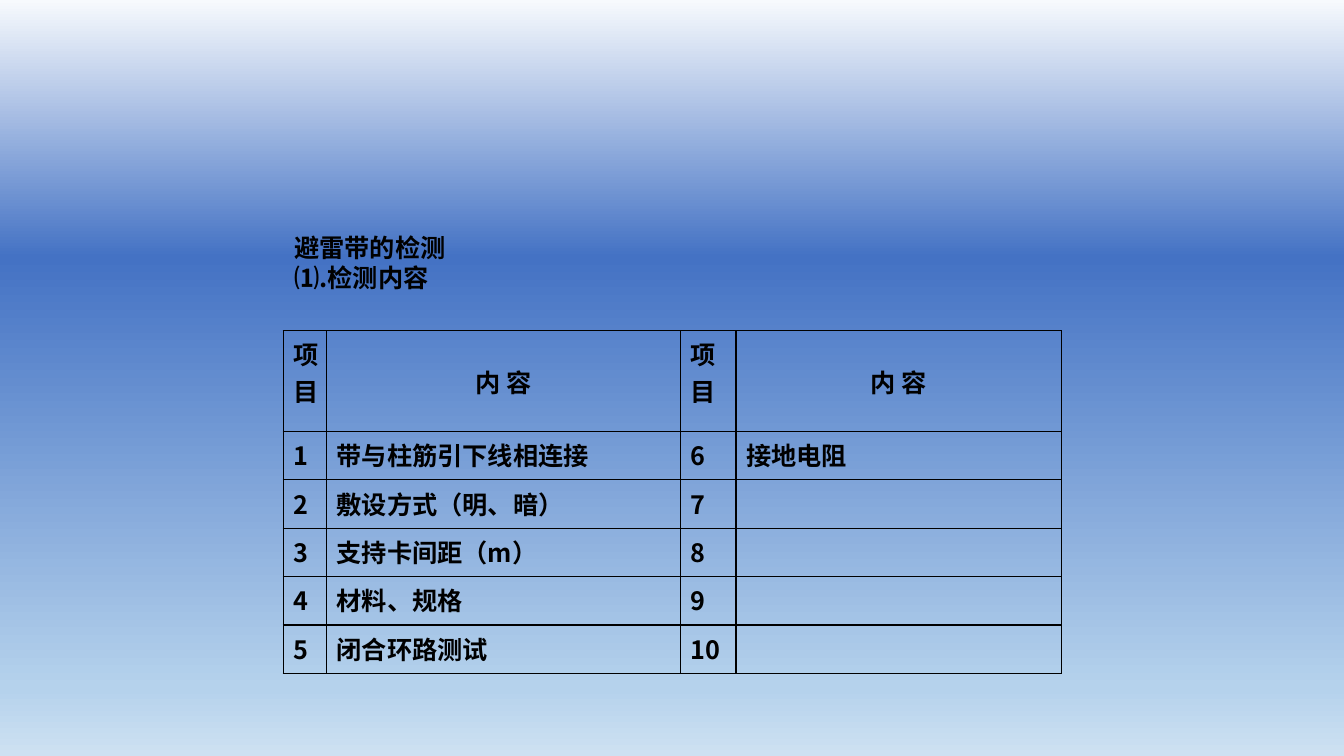
from lxml.etree import SubElement
from pptx import Presentation
from pptx.dml.color import RGBColor
from pptx.enum.text import MSO_ANCHOR, MSO_AUTO_SIZE, PP_ALIGN
from pptx.oxml import parse_xml
from pptx.oxml.ns import nsdecls, qn
from pptx.util import Inches, Pt

BLACK = RGBColor(0x00, 0x00, 0x00)
SKY_STOPS = [
    (0, RGBColor(0xF7, 0xFA, 0xFD)),
    (34, RGBColor(0x44, 0x72, 0xC4)),
    (91, RGBColor(0xB5, 0xD2, 0xEC)),
    (100, RGBColor(0xCE, 0xE1, 0xF2)),
]
FONT = "Noto Sans CJK SC"

TITLE_LINES = ["避雷带的检测", "⑴.检测内容"]
COLUMN_WIDTHS = [0.43, 3.51, 0.55, 3.23]
HEADER_HEIGHT, ROW_HEIGHT = 1, 0.48
HEADER = ["项\n目", "内 容"] * 2
LEFT_ITEMS = ["带与柱筋引下线相连接", "敷设方式（明、暗）", "支持卡间距（m）",
              "材料、规格", "闭合环路测试"]
RIGHT_ITEMS = ["接地电阻", "", "", "", ""]


def style_paragraph(para):
    """Bold black 18 point text, for Latin and East Asian letters."""
    font = para.font
    font.size, font.bold, font.name = Pt(18), True, FONT
    font.color.rgb = BLACK
    properties = para._p.get_or_add_pPr().find(qn("a:defRPr"))
    SubElement(properties, qn("a:ea")).set("typeface", FONT)


def paint_background(page):
    fill = page.background.fill
    fill.gradient()
    fill.gradient_angle = 270
    stops = page.background._cSld.find(".//" + qn("a:gsLst"))
    for old_stop in list(stops):
        stops.remove(old_stop)
    for percent, colour in SKY_STOPS:
        stops.append(parse_xml(
            f'<a:gs {nsdecls("a")} pos="{percent * 1000}">'
            f'<a:srgbClr val="{colour}"/></a:gs>'))


def add_title(page, left, top, width, height):
    box = page.shapes.add_textbox(left, top, width, height)
    frame = box.text_frame
    frame.word_wrap = False
    frame.auto_size = MSO_AUTO_SIZE.SHAPE_TO_FIT_TEXT
    frame.vertical_anchor = MSO_ANCHOR.MIDDLE
    frame.text = "\n".join(TITLE_LINES)
    for para in frame.paragraphs:
        style_paragraph(para)
        para.line_spacing = Pt(21.5)
        para._p.get_or_add_pPr().set("indent", str(Inches(0.41)))


def outline_cell(cell):
    properties = cell._tc.get_or_add_tcPr()
    for side in ("lnL", "lnR", "lnT", "lnB"):
        properties.append(parse_xml(
            f'<a:{side} {nsdecls("a")} w="{Pt(1)}"><a:solidFill>'
            f'<a:srgbClr val="{BLACK}"/></a:solidFill></a:{side}>'))


def add_check_table(page, left, top):
    count = len(LEFT_ITEMS)
    rows = [HEADER] + [
        [str(number), left_item, str(number + count), right_item]
        for number, (left_item, right_item)
        in enumerate(zip(LEFT_ITEMS, RIGHT_ITEMS), start=1)]
    heights = [HEADER_HEIGHT] + [ROW_HEIGHT] * count
    table = page.shapes.add_table(
        len(rows), len(COLUMN_WIDTHS), left, top,
        Inches(sum(COLUMN_WIDTHS)), Inches(sum(heights))).table
    table.first_row = table.horz_banding = False
    for column, width in zip(table.columns, COLUMN_WIDTHS):
        column.width = Inches(width)

    for row_index, texts in enumerate(rows):
        table.rows[row_index].height = Inches(heights[row_index])
        for column_index, text in enumerate(texts):
            cell = table.cell(row_index, column_index)
            cell.text = text
            outline_cell(cell)
            cell.fill.background()
            # Content headings sit in the middle of their cells
            is_heading = row_index == 0 and column_index % 2 == 1
            if is_heading:
                cell.vertical_anchor = MSO_ANCHOR.MIDDLE
            for para in cell.text_frame.paragraphs:
                style_paragraph(para)
                if is_heading:
                    para.alignment = PP_ALIGN.CENTER


def main():
    deck = Presentation()
    deck.slide_width, deck.slide_height = Inches(13.33), Inches(7.5)
    page = deck.slides.add_slide(deck.slide_layouts[6])
    paint_background(page)
    add_title(page, Inches(2.41), Inches(2.25), Inches(2.12), Inches(0.7))
    add_check_table(page, Inches(2.81), Inches(3.28))
    deck.save("out.pptx")


if __name__ == "__main__":
    main()
